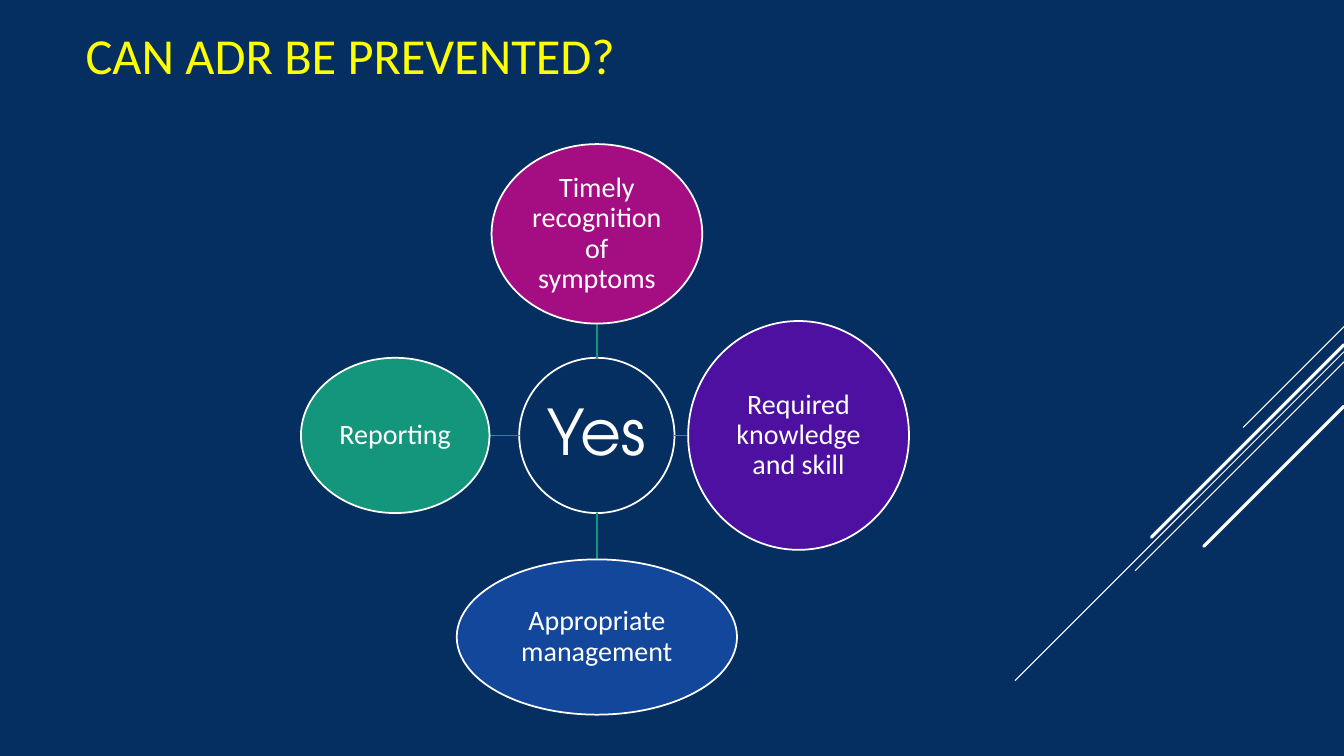
from pptx import Presentation
from pptx import util as u
from pptx.dml.color import RGBColor
from pptx.enum import shapes, text
from pptx.oxml.ns import qn
from lxml import etree

WIDTH, HEIGHT = 13.33, 7.5
NAVY, WHITE, YELLOW, GREEN = "052F61", "FFFFFF", "FFFF00", "14967C"
TITLE = "CAN ADR BE PREVENTED?"
HUB = ("Yes", 1.54, 1.54)
HUB_CENTER = (5.92, 4.32)
ORBIT = 2.0
ANSWERS = [
    ("Timely recognition of symptoms", (0, -1), 2.09, 1.78, "A50E82"),
    ("Required knowledge and skill", (1, 0), 2.19, 2.27, "4D10A0"),
    ("Appropriate management", (0, 1), 2.78, 1.54, "12479B"),
    ("Reporting", (-1, 0), 1.87, 1.54, GREEN),
]
STREAKS = [
    (3.24, 1.0, 0.75),
    (3.49, 3.26, 0.75),
    (3.59, 2.07, 0.75),
    (3.42, 1.91, 2.25),
    (4.03, 1.39, 2.25),
]


def color(value):
    return RGBColor.from_string(value)


def add_line(page, start, end, stroke, points):
    line = page.shapes.add_connector(
        shapes.MSO_CONNECTOR.STRAIGHT, *[u.Inches(v) for v in (*start, *end)])
    line.line.color.rgb = color(stroke)
    line.line.width = u.Pt(points)
    properties = line._element.spPr
    properties.find(qn("a:ln")).set("cap", "rnd")
    etree.SubElement(properties, qn("a:effectLst"))


def write(frame, words, size, font, ink, align, spacing=None):
    frame.text = words
    frame.word_wrap = True
    frame.vertical_anchor = text.MSO_ANCHOR.MIDDLE
    para = frame.paragraphs[0]
    para.alignment = align
    para.line_spacing = spacing
    span = para.runs[0]
    span.font.size = u.Pt(size)
    span.font.name = font
    span.font.color.rgb = color(ink)


def add_bubble(page, words, center, width, height, fill, size, font, inset):
    left, top = center[0] - width / 2, center[1] - height / 2
    bubble = page.shapes.add_shape(
        shapes.MSO_SHAPE.OVAL, *[u.Inches(v) for v in (left, top, width, height)])
    bubble.shadow.inherit = False
    bubble.fill.solid()
    bubble.fill.fore_color.rgb = color(fill)
    bubble.line.color.rgb = color(WHITE)
    bubble.line.width = u.Pt(1.25)
    frame = bubble.text_frame
    frame.margin_left = frame.margin_right = u.Inches(inset)
    frame.margin_top = frame.margin_bottom = u.Inches(inset)
    write(frame, words, size, font, WHITE, text.PP_ALIGN.CENTER, 0.9)


def main():
    deck = Presentation()
    deck.slide_width, deck.slide_height = u.Inches(WIDTH), u.Inches(HEIGHT)
    page = deck.slides.add_slide(deck.slide_layouts[6])
    page.background.fill.solid()
    page.background.fill.fore_color.rgb = color(NAVY)

    for top, reach, points in STREAKS:
        add_line(page, (WIDTH, top), (WIDTH - reach, top + reach), WHITE, points)

    box = page.shapes.add_textbox(*[u.Inches(v) for v in (0.75, 0.16, 5.93, 0.75)])
    write(box.text_frame, TITLE, 36, "Calibri", YELLOW, text.PP_ALIGN.LEFT)

    x, y = HUB_CENTER
    hub_words, hub_width, hub_height = HUB
    add_bubble(page, hub_words, HUB_CENTER, hub_width, hub_height, NAVY,
               45, "TeX Gyre Adventor", 0.03)
    for words, (across, down), width, height, fill in ANSWERS:
        center = (x + across * ORBIT, y + down * ORBIT)
        start = (x + across * hub_width / 2, y + down * hub_height / 2)
        end = (center[0] - across * width / 2, center[1] - down * height / 2)
        add_line(page, start, end, GREEN, 1.25)
        add_bubble(page, words, center, width, height, fill, 20, "Calibri", 0.01)

    deck.save("out.pptx")


if __name__ == "__main__":
    main()
